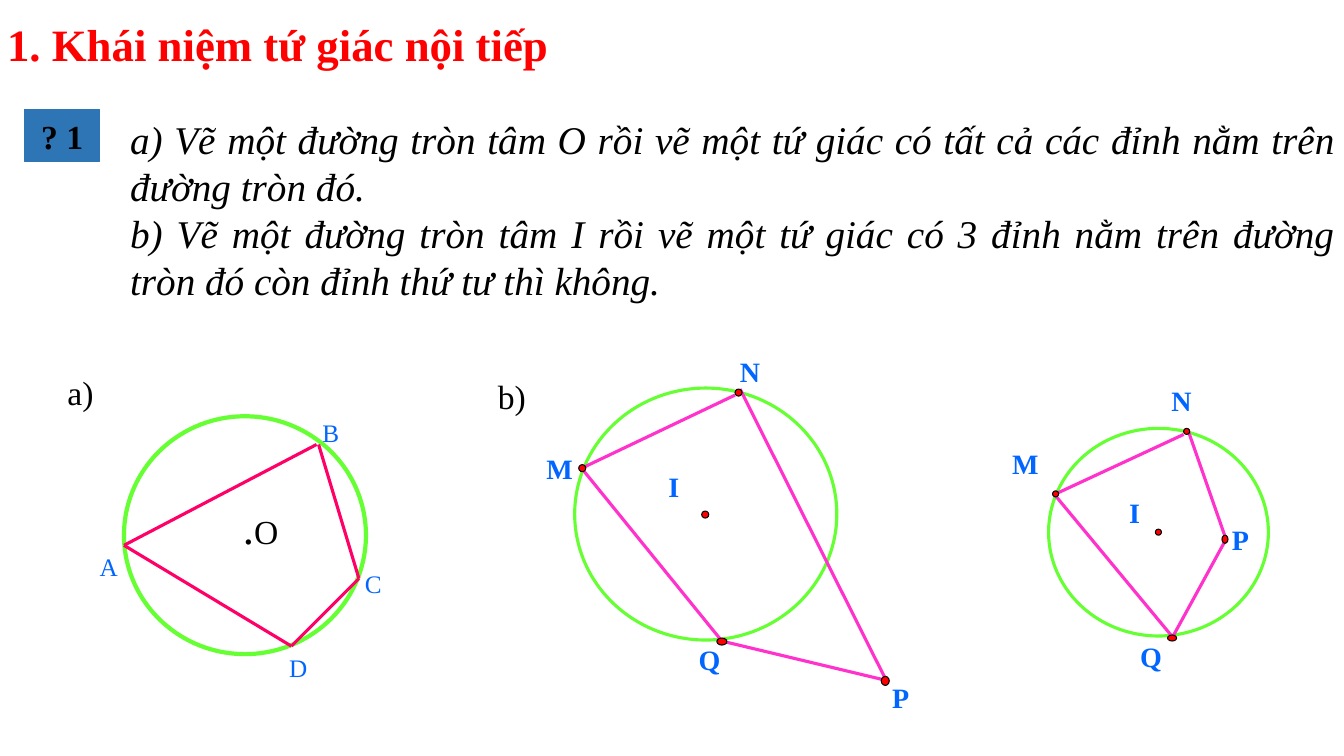
"""Build the slide that introduces inscribed quadrilaterals."""
from lxml.etree import SubElement
from pptx import Presentation
from pptx.dml.color import RGBColor
from pptx.enum.shapes import MSO_CONNECTOR, MSO_SHAPE
from pptx.enum.text import MSO_ANCHOR, MSO_AUTO_SIZE, PP_ALIGN
from pptx.oxml.ns import qn
from pptx.util import Inches, Pt

FONT = "Times New Roman"
BLACK, RED, BLUE, GREEN = "000000", "FF0000", "0066FF", "66FF33"

heading = "1. Khái niệm tứ giác nội tiếp"
heading_box = (-0.03, 0.11, 12.88, 0.64)
tasks = [
    "a) Vẽ một đường tròn tâm O rồi vẽ một tứ giác có tất cả các đỉnh nằm trên đường tròn đó.",
    "b) Vẽ một đường tròn tâm I rồi vẽ một tứ giác có 3 đỉnh nằm trên đường tròn đó còn đỉnh thứ tư thì không.",
]
tasks_box = (1.19, 1.09, 12.15, 1.99)
badge, badge_box, badge_fill = "? 1", (0.24, 1.09, 0.75, 0.51), "2E75B6"

HEADING = {"size": Pt(32), "bold": True, "italic": False}
TASK = {"size": Pt(28), "bold": False, "italic": True}
BADGE = {"size": Pt(24), "bold": True}
PART = {"size": Pt(24)}
CENTRE_MARK = {"size": Pt(32)}
VERTEX = {"size": Pt(18)}
POINT = {"size": Pt(20), "bold": True}

parts = [("a)", (0.57, 3.64, 0.67, 0.5)), ("b)", (4.84, 3.68, 0.5, 0.5))]
centre_box = (2.31, 4.91, 0.72, 0.66)

figures = [
    {
        "circle": (1.23, 4.13, 2.4, 2.36), "circle_width": 3,
        "side_color": "FF0066", "label_format": VERTEX,
        "sides": [(1.23, 5.41, 3.14, 4.41), (3.16, 4.41, 3.56, 5.74),
                  (3.56, 5.74, 2.89, 6.41), (2.89, 6.41, 1.23, 5.41)],
        "dots": [],
        "labels": {"A": (0.89, 5.42, 0.5, 0.4), "B": (3.1, 4.09, 0.5, 0.4),
                   "C": (3.52, 5.59, 0.5, 0.4), "D": (2.77, 6.42, 0.5, 0.4)},
    },
    {
        "circle": (10.4, 4.25, 2.18, 2.06), "circle_width": 2.25,
        "side_color": "FF33CC", "label_format": POINT,
        "sides": [(11.74, 4.31, 10.47, 4.9), (11.78, 4.26, 12.16, 5.35),
                  (12.16, 5.35, 11.63, 6.32), (10.47, 4.92, 11.63, 6.32)],
        "dots": [(11.46, 5.25, 0.06, 0.06), (10.44, 4.87, 0.06, 0.06),
                 (12.12, 5.31, 0.06, 0.08), (11.58, 6.3, 0.09, 0.06),
                 (11.74, 4.25, 0.06, 0.06)],
        "labels": {"M": (9.94, 4.38, 0.63, 0.63), "N": (11.52, 3.76, 0.63, 0.65),
                   "P": (12.12, 5.13, 0.53, 0.43), "Q": (11.21, 6.3, 0.85, 0.6),
                   "I": (11.1, 4.87, 0.95, 0.54)},
    },
    {
        "circle": (5.7, 3.85, 2.6, 2.5), "circle_width": 2.25,
        "side_color": "FF33CC", "label_format": POINT,
        "sides": [(7.29, 3.92, 5.78, 4.64), (7.34, 3.86, 8.79, 6.75),
                  (8.79, 6.75, 7.16, 6.36), (5.78, 4.66, 7.16, 6.36)],
        "dots": [(6.96, 5.07, 0.07, 0.07), (5.74, 4.61, 0.07, 0.07),
                 (8.74, 6.71, 0.08, 0.09), (7.11, 6.33, 0.1, 0.07),
                 (7.29, 3.86, 0.07, 0.07)],
        "labels": {"M": (5.32, 4.43, 0.67, 0.46), "N": (7.24, 3.47, 0.42, 0.45),
                   "P": (8.75, 6.7, 0.48, 0.44), "Q": (6.83, 6.33, 0.49, 0.47),
                   "I": (6.53, 4.61, 1.13, 0.65)},
    },
]


def rgb(color):
    return RGBColor.from_string(color)


def inches(lengths):
    return [Inches(length) for length in lengths]


def write(paragraph, wording, look, color):
    run = paragraph.add_run()
    run.text = wording
    for attribute, setting in {"name": FONT, **look}.items():
        setattr(run.font, attribute, setting)
    run.font.color.rgb = rgb(color)


def add_label(shapes, wording, box, look, color):
    label = shapes.add_textbox(*inches(box))
    label.text_frame.word_wrap = True
    write(label.text_frame.paragraphs[0], wording, look, color)
    return label


def add_outline(shapes, preset, box, fill, line, width):
    outline = shapes.add_shape(preset, *inches(box))
    outline.shadow.inherit = False
    if fill:
        outline.fill.solid()
        outline.fill.fore_color.rgb = rgb(fill)
    else:
        outline.fill.background()
    outline.line.color.rgb = rgb(line)
    outline.line.width = Pt(width)
    return outline


def add_side(shapes, ends, color):
    side = shapes.add_connector(MSO_CONNECTOR.STRAIGHT, *inches(ends))
    side.line.color.rgb = rgb(color)
    side.line.width = Pt(2.25)
    SubElement(side._element.spPr, qn("a:effectLst"))


def fill_placeholder(placeholder, box, paragraphs, anchor, look, color):
    for attribute, length in zip(("left", "top", "width", "height"), inches(box)):
        setattr(placeholder, attribute, length)
    frame = placeholder.text_frame
    frame.auto_size = MSO_AUTO_SIZE.NONE
    frame.vertical_anchor = anchor
    for index, wording in enumerate(paragraphs):
        paragraph = frame.add_paragraph() if index else frame.paragraphs[0]
        properties = paragraph._p.get_or_add_pPr()
        properties.set("marL", "0")
        properties.set("indent", "0")
        SubElement(properties, qn("a:buNone"))
        paragraph.alignment = PP_ALIGN.JUSTIFY
        paragraph.space_before = Pt(0)
        write(paragraph, wording, look, color)


def draw_figure(slide, figure):
    shapes = slide.shapes.add_group_shape().shapes
    add_outline(shapes, MSO_SHAPE.OVAL, figure["circle"], None, GREEN, figure["circle_width"])
    for ends in figure["sides"]:
        add_side(shapes, ends, figure["side_color"])
    for dot in figure["dots"]:
        add_outline(shapes, MSO_SHAPE.OVAL, dot, RED, BLACK, 0)
    for letter, box in figure["labels"].items():
        add_label(shapes, letter, box, figure["label_format"], BLUE)


def main():
    deck = Presentation()
    deck.slide_width, deck.slide_height = inches((13.33, 7.5))
    slide = deck.slides.add_slide(deck.slide_layouts[1])
    fill_placeholder(slide.shapes.title, heading_box, [heading], MSO_ANCHOR.MIDDLE, HEADING, RED)
    fill_placeholder(slide.placeholders[1], tasks_box, tasks, MSO_ANCHOR.TOP, TASK, BLACK)

    marker = add_outline(slide.shapes, MSO_SHAPE.RECTANGLE, badge_box, badge_fill, badge_fill, 0.75)
    marker_line = marker.text_frame.paragraphs[0]
    marker_line.alignment = PP_ALIGN.CENTER
    write(marker_line, badge, BADGE, BLACK)

    for wording, box in parts:
        add_label(slide.shapes, wording, box, PART, BLACK)
    centre = add_label(slide.shapes, ".", centre_box, CENTRE_MARK, BLACK)
    write(centre.text_frame.paragraphs[0], "O", PART, BLACK)
    for figure in figures:
        draw_figure(slide, figure)
    deck.save("out.pptx")


if __name__ == "__main__":
    main()
